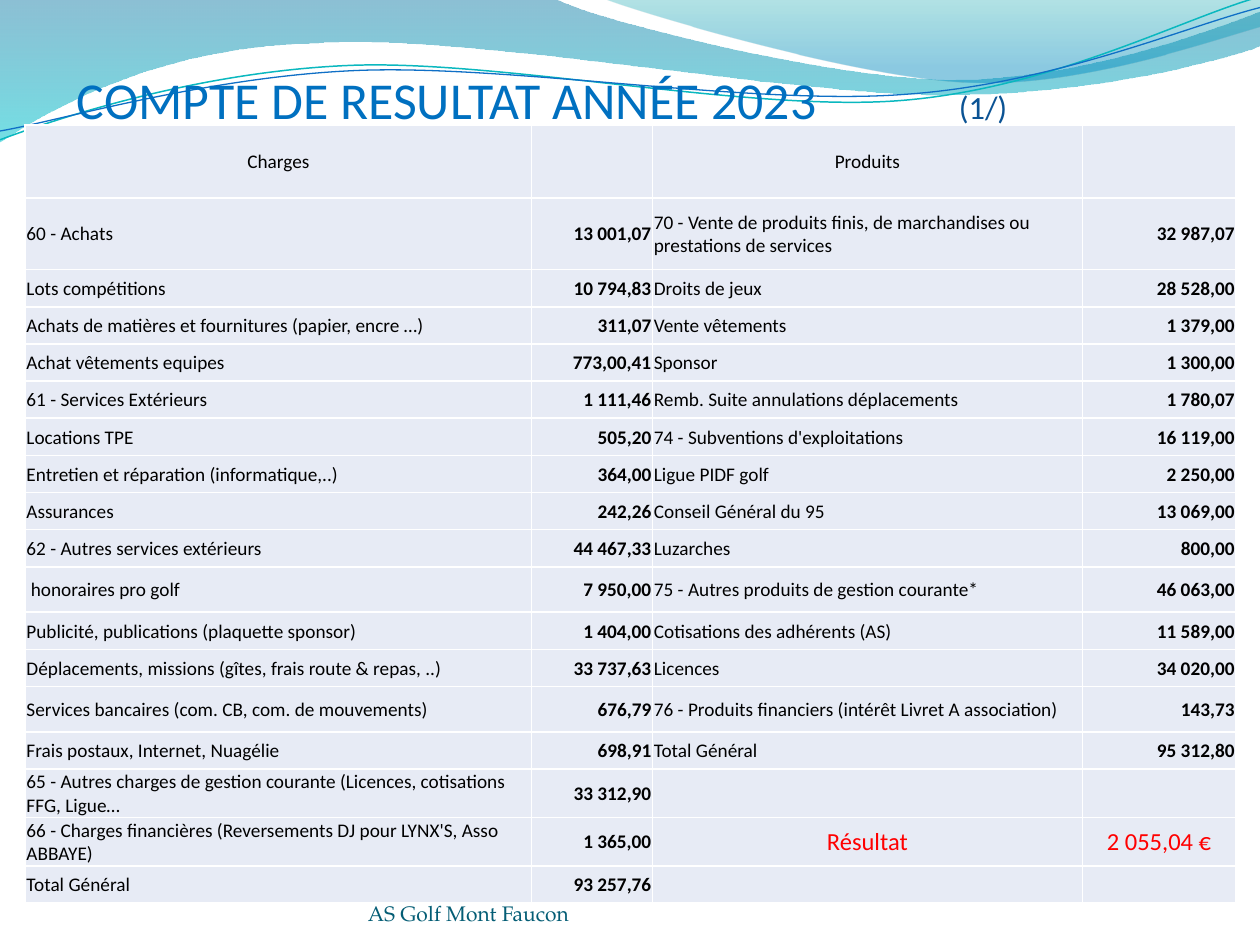
from lxml.etree import SubElement
from pptx import Presentation
from pptx.dml.color import RGBColor
from pptx.enum.text import MSO_ANCHOR as Anchor, MSO_AUTO_SIZE as AutoSize, PP_ALIGN as Align
from pptx.oxml.ns import qn
from pptx.util import Inches, Pt

TITLE, PAGE = "COMPTE DE RESULTAT ANNÉE 2023", "(1/)"
FOOTER = "AS Golf Mont Faucon"
FONT = "Calibri"

ROWS = [
    ("Charges", "", "Produits", ""),
    ("60 - Achats", "13 001,07",
     "70 - Vente de produits finis, de marchandises ou prestations de services", "32 987,07"),
    ("Lots compétitions", "10 794,83", "Droits de jeux", "28 528,00"),
    ("Achats de matières et fournitures (papier, encre …)", "311,07", "Vente vêtements", "1 379,00"),
    ("Achat vêtements equipes", "773,00,41", "Sponsor", "1 300,00"),
    ("61 - Services Extérieurs", "1 111,46", "Remb. Suite annulations déplacements", "1 780,07"),
    ("Locations TPE", "505,20", "74 - Subventions d'exploitations", "16 119,00"),
    ("Entretien et réparation (informatique,..)", "364,00", "Ligue PIDF golf", "2 250,00"),
    ("Assurances", "242,26", "Conseil Général du 95", "13 069,00"),
    ("62 - Autres services extérieurs", "44 467,33", "Luzarches", "800,00"),
    (" honoraires pro golf", "7 950,00", "75 - Autres produits de gestion courante*", "46 063,00"),
    ("Publicité, publications (plaquette sponsor)", "1 404,00",
     "Cotisations des adhérents (AS)", "11 589,00"),
    ("Déplacements, missions (gîtes, frais route & repas, ..)", "33 737,63", "Licences", "34 020,00"),
    ("Services bancaires (com. CB, com. de mouvements)", "676,79",
     "76 - Produits financiers (intérêt Livret A association)", "143,73"),
    ("Frais postaux, Internet, Nuagélie", "698,91", "Total Général", "95 312,80"),
    ("65 - Autres charges de gestion courante (Licences, cotisations FFG, Ligue…", "33 312,90", "", ""),
    ("66 - Charges financières (Reversements DJ pour LYNX'S, Asso ABBAYE)", "1 365,00",
     "Résultat", "2 055,04 €"),
    ("Total Général", "93 257,76", "", ""),
]
COLUMN_WIDTHS = (4.02, 0.96, 3.41, 1.22)
ROW_HEIGHT = 0.295
TALL_ROWS = {0: 0.58, 1: 0.57, 10: 0.36, 13: 0.36, 15: 0.385, 16: 0.385}
RESULT_CELLS = {(16, 2), (16, 3)}

# Each outline is a start point followed by lines (1 point) and Bézier curves (3 points).
BANDS = [
    ([(0, 0), [(4.4, -0.01)],
      [(4.76, 0.17), (6.64, 0.63), (7.58, 0.63)], [(8.53, 0.63), (9.58, 0.26), (10, 0.09)],
      [(10.01, 0.36)],
      [(9.83, 0.44), (8.7, 0.76), (7.46, 0.75)], [(6.22, 0.75), (3.82, 0.28), (2.57, 0.34)],
      [(1.29, 0.36), (0.46, 0.83), (-0.01, 1.13)]],
     [(0, "0074A1", 45), (1, "00C6CF", 55)]),
    ([(4.79, -0.01),
      [(5.09, 0.11), (6.82, 0.62), (7.69, 0.65)], [(8.56, 0.69), (9.61, 0.32), (10, 0.21)],
      [(10, 0)]],
     [(0, "00A1A9", 30), (0.8, "008BBF", 45)]),
]
WAVES = [
    ([(0, 1.11), [(0.48, 0.93), (1.58, 0.57), (2.77, 0.52)],
      [(3.95, 0.47), (5.93, 0.89), (7.13, 0.8)], [(8.33, 0.71), (9.38, 0.15), (9.98, -0.02)]],
     "0AB8BF", 0.85),
    ([(0, 1.04), [(0.47, 0.96), (1.64, 0.61), (2.83, 0.56)],
      [(4.03, 0.51), (5.97, 0.84), (7.17, 0.75)], [(8.36, 0.67), (9.41, 0.21), (10, 0.06)]],
     "0F6FC6", 0.75),
]
UNITS_PER_INCH = 1000


def rgb(value):
    return RGBColor.from_string(value)


def style(font, size, color, name=FONT, bold=False):
    font.size, font.name, font.bold = Pt(size), name, bold
    font.color.rgb = rgb(color)


def to_units(point):
    return tuple(round(value * UNITS_PER_INCH) for value in point)


def draw_outline(shapes, outline, close):
    """Build the outline through its anchor points, then bend the curved segments."""
    start, *segments = outline
    anchors = [to_units(start)] + [to_units(segment[-1]) for segment in segments]
    builder = shapes.build_freeform(*anchors[0], scale=Inches(1) / UNITS_PER_INCH)
    builder.add_line_segments(anchors[1:], close=close)
    shape = builder.convert_to_shape()
    shape.shadow.inherit = False

    left, top = (min(values) for values in zip(*anchors))
    for line, segment in zip(list(shape.element.iter(qn("a:lnTo"))), segments):
        if len(segment) == 3:
            curve = SubElement(line.getparent(), qn("a:cubicBezTo"))
            for x, y in map(to_units, segment):
                SubElement(curve, qn("a:pt"), x=str(x - left), y=str(y - top))
            line.getparent().replace(line, curve)
    return shape


def add_band(shapes, outline, stops):
    band = draw_outline(shapes, outline, close=True)
    band.line.fill.background()
    band.fill.gradient()
    band.fill.gradient_angle = 270
    for stop, (position, color, _) in zip(band.fill.gradient_stops, stops):
        stop.position, stop.color.rgb = position, rgb(color)
    for color_xml, (_, _, opacity) in zip(band.element.spPr.iter(qn("a:srgbClr")), stops):
        SubElement(color_xml, qn("a:alpha"), val=str(opacity * 1000))


def add_wave(shapes, outline, color, width):
    wave = draw_outline(shapes, outline, close=False)
    wave.fill.background()
    wave.line.color.rgb, wave.line.width = rgb(color), Pt(width)


def fill_cell(cell, text, row, column):
    is_amount = column % 2 == 1
    is_result = (row, column) in RESULT_CELLS
    cell.fill.solid()
    cell.fill.fore_color.rgb = rgb("E7EBF5")
    cell.vertical_anchor = Anchor.MIDDLE
    cell.margin_left = cell.margin_right = cell.margin_top = Inches(0.01)
    cell.margin_bottom = 0
    cell.text = text
    paragraph = cell.text_frame.paragraphs[0]
    if row == 0 or is_result:
        paragraph.alignment = Align.CENTER
    else:
        paragraph.alignment = Align.RIGHT if is_amount else Align.LEFT
    style(paragraph.font, 14 if is_result else 11, "FF0000" if is_result else "000000",
          bold=is_amount and not is_result)


def add_accounts(shapes):
    heights = [TALL_ROWS.get(row, ROW_HEIGHT) for row in range(len(ROWS))]
    accounts = shapes.add_table(len(ROWS), len(COLUMN_WIDTHS), Inches(0.2), Inches(0.99),
                                Inches(sum(COLUMN_WIDTHS)), Inches(sum(heights))).table
    accounts.first_row = accounts.horz_banding = False
    for column, width in zip(accounts.columns, COLUMN_WIDTHS):
        column.width = Inches(width)
    for row, (values, height) in enumerate(zip(ROWS, heights)):
        accounts.rows[row].height = Inches(height)
        for column, text in enumerate(values):
            fill_cell(accounts.cell(row, column), text, row, column)


def add_footer(shapes):
    frame = shapes.add_textbox(Inches(2.92), Inches(6.95), Inches(3.67), Inches(0.4)).text_frame
    frame.word_wrap, frame.vertical_anchor = True, Anchor.BOTTOM
    frame.margin_left = frame.margin_right = frame.margin_top = frame.margin_bottom = 0
    frame.text = FOOTER
    style(frame.paragraphs[0].font, 12, "045D75", "TeX Gyre Pagella")


def set_title(title):
    title.left, title.top, title.width, title.height = map(Inches, (0.51, 0, 9.07, 0.99))
    frame = title.text_frame
    frame.auto_size, frame.vertical_anchor = AutoSize.NONE, Anchor.TOP
    frame.margin_top, frame.margin_bottom = Inches(0.54), 0
    paragraph = frame.paragraphs[0]
    paragraph.alignment = Align.LEFT
    tabs = SubElement(paragraph._p.get_or_add_pPr(), qn("a:tabLst"))
    SubElement(tabs, qn("a:tab"), pos=str(Inches(7)), algn="l")
    for text, size, color in ((TITLE + "\t", 29.6, "0070C0"), (PAGE, 18.5, "0B5394")):
        run = paragraph.add_run()
        run.text = text
        style(run.font, size, color)


def main():
    deck = Presentation()
    deck.slide_width, deck.slide_height = Inches(10), Inches(7.5)
    slide = deck.slides.add_slide(deck.slide_layouts[5])
    shapes = slide.shapes
    for band in BANDS:
        add_band(shapes, *band)
    for wave in WAVES:
        add_wave(shapes, *wave)
    add_footer(shapes)
    add_accounts(shapes)
    set_title(shapes.title)
    shapes.element.append(shapes.title.element)  # the title lies in front of the waves
    deck.save("out.pptx")


if __name__ == "__main__":
    main()
